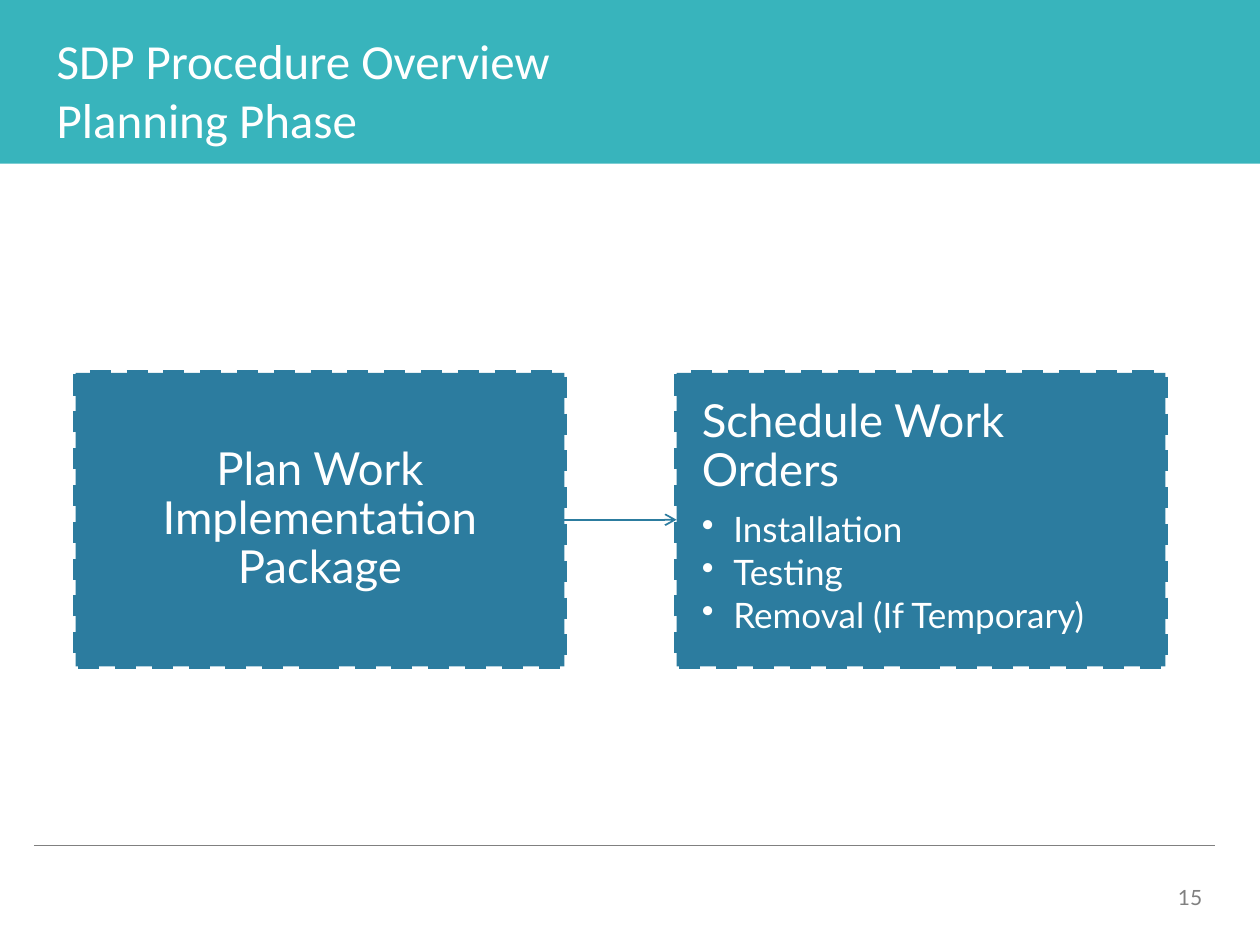
from lxml.etree import SubElement
from pptx import Presentation
from pptx.dml.color import RGBColor
from pptx.enum.dml import MSO_LINE_DASH_STYLE as Dash
from pptx.enum.shapes import MSO_CONNECTOR as Connector, MSO_SHAPE as Shape
from pptx.enum.text import MSO_ANCHOR as Anchor, PP_ALIGN as Align
from pptx.oxml.ns import qn
from pptx.util import Inches, Pt

COLORS = {"band": "38B4BC", "step": "2C7C9F", "muted": "808080", "white": "FFFFFF"}
WIDTH, HEIGHT = 10, 7.5

# Process row: equal columns with a fixed pitch
STEP_LEFT, STEP_TOP = 0.6, 2.96
STEP_WIDTH, STEP_HEIGHT, STEP_PITCH = 3.88, 2.33, 4.77


def color(name):
    return RGBColor.from_string(COLORS[name])


def set_frame(frame, inset, anchor=Anchor.TOP, wrap=True):
    frame.word_wrap = wrap
    frame.vertical_anchor = anchor
    frame.margin_left = frame.margin_right = Inches(inset)
    frame.margin_top = frame.margin_bottom = Inches(inset)


def write(paragraph, text, size, font="Lato", ink="white", align=Align.LEFT,
          spacing=None, after=0, bullet=False):
    """Fill one paragraph; a vertical tab in the text is a line break."""
    paragraph.text = text
    if bullet:
        properties = paragraph._p.get_or_add_pPr()
        properties.set("marL", str(Inches(0.25)))
        properties.set("indent", str(-Inches(0.25)))
        SubElement(properties, qn("a:buChar"), char="•")
    paragraph.alignment = align
    paragraph.space_after = Pt(after)
    if spacing:
        paragraph.line_spacing = spacing
    for run in paragraph.runs:
        run.font.name = font
        run.font.size = Pt(size)
        run.font.color.rgb = color(ink)


def add_label(slide, box, text, inset=0, wrap=True, **style):
    frame = slide.shapes.add_textbox(*map(Inches, box)).text_frame
    set_frame(frame, inset, wrap=wrap)
    write(frame.paragraphs[0], text, **style)


def add_block(slide, box, fill):
    block = slide.shapes.add_shape(Shape.RECTANGLE, *map(Inches, box))
    block.shadow.inherit = False
    block.fill.solid()
    block.fill.fore_color.rgb = color(fill)
    block.line.fill.background()
    return block


def add_step(slide, column, heading, details=(), align=Align.LEFT, anchor=Anchor.TOP):
    left = STEP_LEFT + column * STEP_PITCH
    step = add_block(slide, (left, STEP_TOP, STEP_WIDTH, STEP_HEIGHT), "step")
    step.line.color.rgb = color("step")
    step.line.width = Pt(3)
    step.line.dash_style = Dash.DASH
    frame = step.text_frame
    set_frame(frame, 0.2, anchor)
    write(frame.paragraphs[0], heading, size=26, align=align, spacing=0.9, after=9)
    for detail in details:
        write(frame.add_paragraph(), detail, size=20, spacing=0.9, after=3, bullet=True)
    return step


def add_line(slide, start, end, ink, width):
    line = slide.shapes.add_connector(Connector.STRAIGHT, *map(Inches, start + end))
    line.line.color.rgb = color(ink)
    line.line.width = Pt(width)
    SubElement(line._element.spPr, qn("a:effectLst"))
    return line


def add_arrow(slide, source, target):
    middle = STEP_TOP + STEP_HEIGHT / 2
    arrow = add_line(slide, (STEP_LEFT + STEP_WIDTH, middle),
                     (STEP_LEFT + STEP_PITCH, middle), "step", 1)
    arrow.begin_connect(source, 3)
    arrow.end_connect(target, 1)
    SubElement(arrow.line._get_or_add_ln(), qn("a:tailEnd"), type="arrow")


def main():
    deck = Presentation()
    deck.slide_width, deck.slide_height = Inches(WIDTH), Inches(HEIGHT)
    slide = deck.slides.add_slide(deck.slide_layouts[6])

    # Header band and title
    add_block(slide, (0, 0, WIDTH, 1.3), "band")
    add_label(slide, (0.45, 0.24, 8.91, 1.07), "SDP Procedure Overview\vPlanning Phase",
              wrap=False, size=28, font="Calibri")

    # Footer rule and page number
    add_line(slide, (0.27, 6.71), (9.64, 6.71), "muted", 0.25)
    add_label(slide, (9.25, 6.92, 0.69, 0.3), "15", inset=0.1, size=12, ink="muted")

    # Planning steps
    plan = add_step(slide, 0, "Plan Work Implementation Package",
                    align=Align.CENTER, anchor=Anchor.MIDDLE)
    schedule = add_step(slide, 1, "Schedule Work Orders",
                        ("Installation", "Testing", "Removal (If Temporary)"))
    add_arrow(slide, plan, schedule)

    deck.save("out.pptx")


if __name__ == "__main__":
    main()
